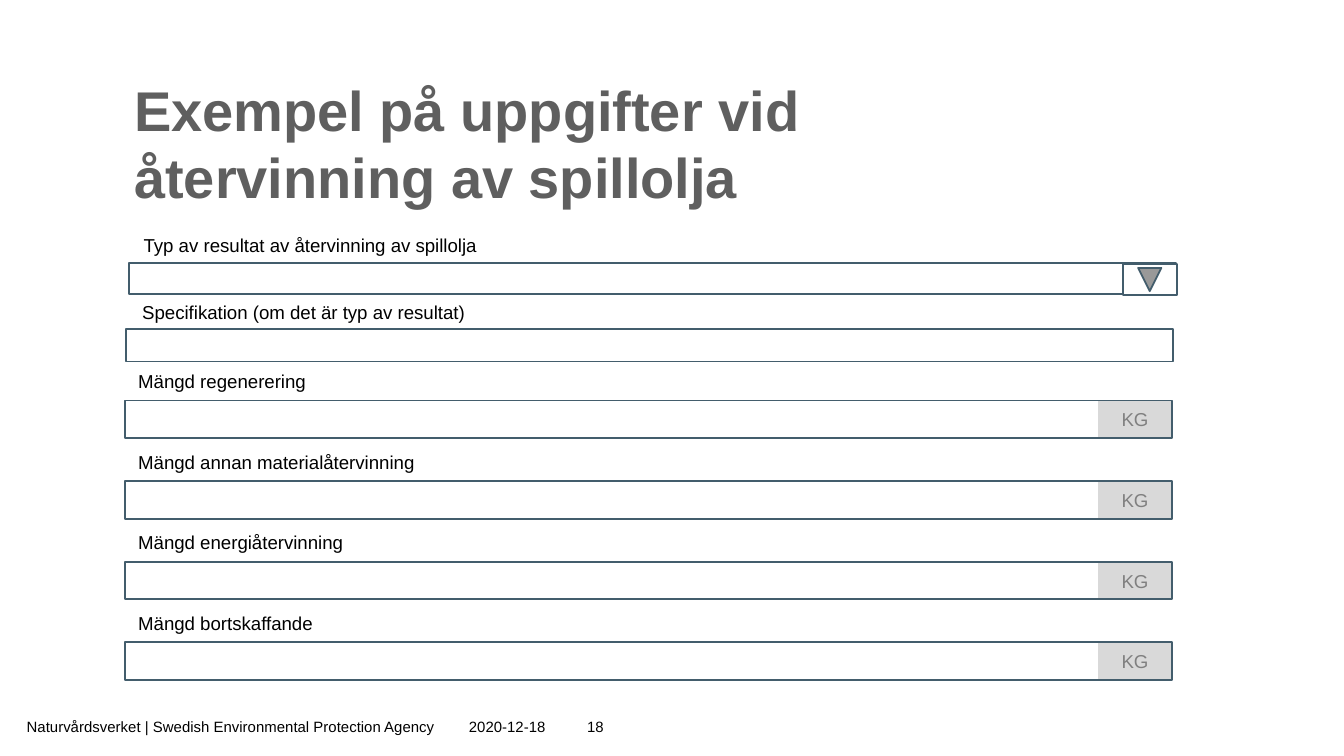
from typing import NamedTuple

from pptx import Presentation
from pptx import util as u
from pptx.dml.color import RGBColor
from pptx.enum import shapes, text

WHITE = RGBColor(0xFF, 0xFF, 0xFF)
BLACK = RGBColor(0, 0, 0)
TITLE_GREY = RGBColor(0x5F, 0x5F, 0x5F)
UNIT_FILL = RGBColor(0xD9, 0xD9, 0xD9)
UNIT_TEXT = RGBColor(0x80, 0x80, 0x80)
OUTLINE = RGBColor(0x43, 0x5D, 0x6C)

FIELD_WIDTH = 7.79
UNIT_WIDTH = 0.55
AMOUNT_LEFT, AMOUNT_TOP, AMOUNT_HEIGHT, AMOUNT_PITCH = 0.93, 2.98, 0.28, 0.6
LABEL_OFFSET = 0.26


class Box(NamedTuple):
    left: float
    top: float
    width: float
    height: float

    def inches(self) -> list:
        return [u.Inches(value) for value in self]


class Footer(NamedTuple):
    content: str
    box: Box
    align: text.PP_ALIGN = text.PP_ALIGN.LEFT


AMOUNTS = ["Mängd regenerering", "Mängd annan materialåtervinning",
           "Mängd energiåtervinning", "Mängd bortskaffande"]

FOOTERS = [
    Footer("2020-12-18", Box(3.39, 5.3, 0.82, 0.21)),
    Footer("Naturvårdsverket | Swedish Environmental Protection Agency",
           Box(0.1, 5.3, 3.32, 0.21)),
    Footer("18", Box(4.2, 5.3, 0.39, 0.21), text.PP_ALIGN.RIGHT),
]


def write(shape, content: str, size=10, color=BLACK, bold=False,
          align=text.PP_ALIGN.LEFT, anchor=text.MSO_ANCHOR.MIDDLE) -> None:
    frame = shape.text_frame
    frame.word_wrap = True
    frame.vertical_anchor = anchor
    paragraph = frame.paragraphs[0]
    paragraph.alignment = align
    run = paragraph.add_run()
    run.text = content
    font = run.font
    font.name, font.size, font.bold = "Arial", u.Pt(size), bold
    font.color.rgb = color


def add_box(parent, box: Box, fill=None, line=None,
            kind=shapes.MSO_SHAPE.RECTANGLE):
    shape = parent.shapes.add_shape(kind, *box.inches())
    shape.shadow.inherit = False
    if fill is None:
        shape.fill.background()
    else:
        shape.fill.solid()
        shape.fill.fore_color.rgb = fill
    if line is None:
        shape.line.fill.background()
    else:
        shape.line.color.rgb = line
        shape.line.width = u.Pt(1)
    return shape


def add_label(slide, content: str, left: float, top: float) -> None:
    write(add_box(slide, Box(left, top, 5.11, 0.23), fill=WHITE), content)


def add_amount(slide, label: str, top: float) -> None:
    group = slide.shapes.add_group_shape()
    unit_left = AMOUNT_LEFT + FIELD_WIDTH - UNIT_WIDTH
    unit = add_box(group, Box(unit_left, top, UNIT_WIDTH, AMOUNT_HEIGHT), fill=UNIT_FILL)
    write(unit, "KG", color=UNIT_TEXT, align=text.PP_ALIGN.CENTER)
    add_box(group, Box(AMOUNT_LEFT, top, FIELD_WIDTH, AMOUNT_HEIGHT), line=OUTLINE)
    add_label(slide, label, AMOUNT_LEFT, top - LABEL_OFFSET)


def add_dropdown(slide) -> None:
    group = slide.shapes.add_group_shape()
    add_box(group, Box(0.96, 1.96, FIELD_WIDTH, 0.23), fill=WHITE, line=OUTLINE)
    arrow = add_box(group, Box(8.44, 1.88, 0.23, 0.4), fill=WHITE, line=OUTLINE,
                    kind=shapes.MSO_SHAPE.ACTION_BUTTON_BACK_OR_PREVIOUS)
    arrow.rotation = 270


def main() -> None:
    # Widescreen slide, 16:9
    presentation = Presentation()
    presentation.slide_width = u.Inches(10)
    presentation.slide_height = u.Inches(10 * 9 / 16)
    slide = presentation.slides.add_slide(presentation.slide_layouts[6])

    # Footer
    for footer in FOOTERS:
        write(slide.shapes.add_textbox(*footer.box.inches()), footer.content,
              size=8, align=footer.align)

    # Amount fields with a unit, from the bottom up
    for row, label in reversed(list(enumerate(AMOUNTS))):
        add_amount(slide, label, AMOUNT_TOP + row * AMOUNT_PITCH)

    # Specification field
    add_box(slide, Box(0.94, 2.45, FIELD_WIDTH, 0.24), fill=WHITE, line=OUTLINE)
    add_label(slide, "Specifikation (om det är typ av resultat)", 0.96, 2.21)

    # Result type drop-down
    add_dropdown(slide)
    add_label(slide, "Typ av resultat av återvinning av spillolja", 0.97, 1.71)

    # Title
    title = slide.shapes.add_textbox(*Box(0.9, 0.51, 6.85, 1.06).inches())
    write(title, "Exempel på uppgifter vid återvinning av spillolja", size=30,
          color=TITLE_GREY, bold=True, anchor=text.MSO_ANCHOR.TOP)

    presentation.save("out.pptx")


if __name__ == "__main__":
    main()
